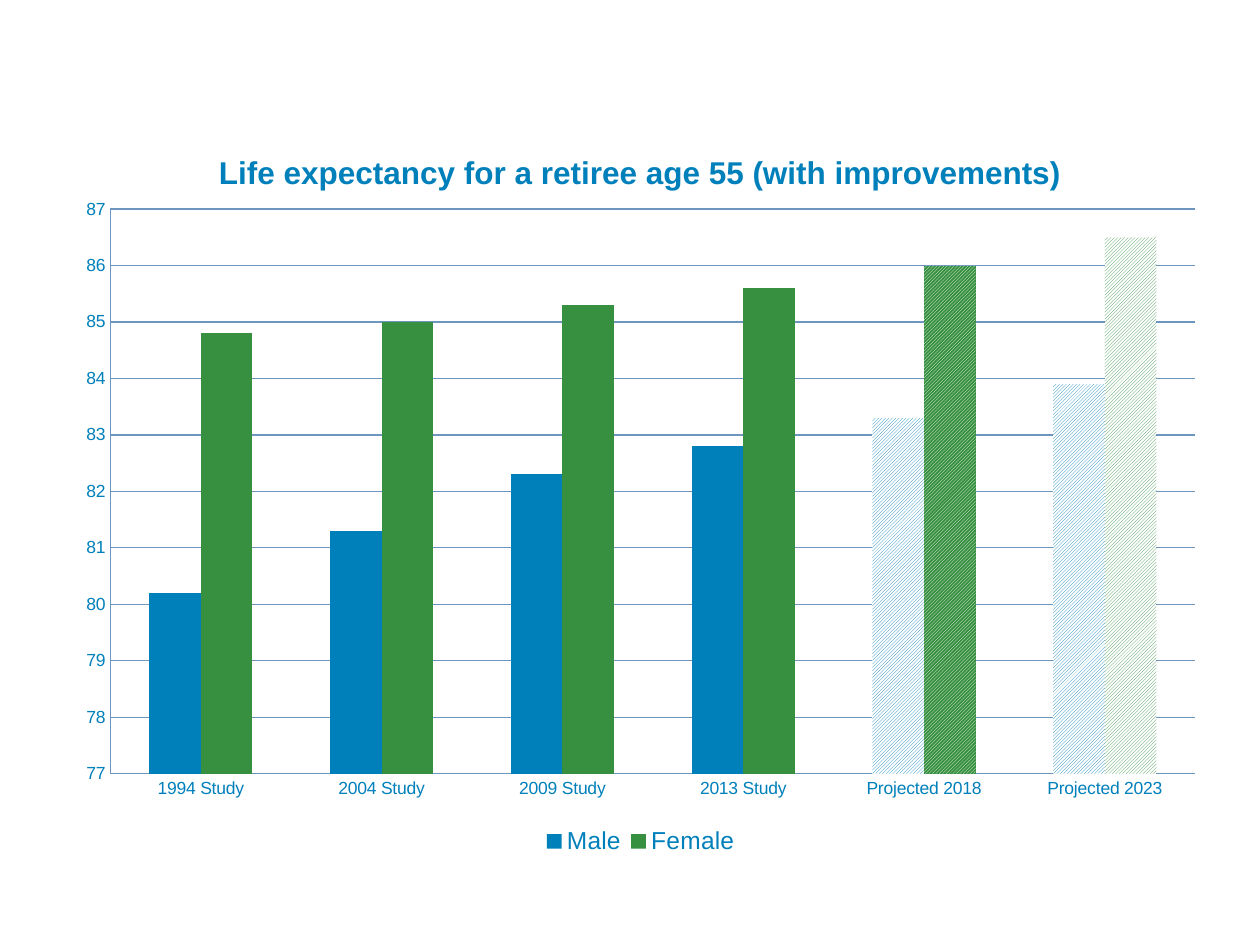
from lxml import etree
from pptx import Presentation
from pptx.chart.data import CategoryChartData
from pptx.dml.color import RGBColor
from pptx.enum.chart import XL_CHART_TYPE, XL_LEGEND_POSITION, XL_TICK_MARK
from pptx.enum.dml import MSO_PATTERN
from pptx.oxml.ns import qn
from pptx.util import Inches, Pt

COLUMNS = XL_CHART_TYPE.COLUMN_CLUSTERED
BOTTOM = XL_LEGEND_POSITION.BOTTOM
NO_TICK = XL_TICK_MARK.NONE
HATCH = MSO_PATTERN.DARK_UPWARD_DIAGONAL

COLORS = {"male": "0080BB", "female": "369040", "white": "FFFFFF", "grid": "6D96BF"}
RGB = {name: RGBColor.from_string(value) for name, value in COLORS.items()}
CATEGORIES = ["1994 Study", "2004 Study", "2009 Study", "2013 Study",
              "Projected 2018", "Projected 2023"]
SERIES = {
    "Male": [80.2, 81.3, 82.3, 82.8, 83.3, 83.9],
    "Female": [84.8, 85.0, 85.3, 85.6, 86.0, 86.5],
}
# Hatched columns: (series, category index) -> (foreground, background)
PROJECTED = {
    ("Male", 4): ("male", "white"),
    ("Male", 5): ("male", "white"),
    ("Female", 4): ("white", "female"),
    ("Female", 5): ("female", "white"),
}


def set_layout(parent, after, inner=False, **fractions):
    """Place a chart part by fractions of the chart area."""
    for old in parent.findall(qn("c:layout")):
        parent.remove(old)
    layout = etree.Element(qn("c:layout"))
    manual = etree.SubElement(layout, qn("c:manualLayout"))
    settings = {"layoutTarget": "inner"} if inner else {}
    settings.update(xMode="edge", yMode="edge", **fractions)
    for tag, value in settings.items():
        etree.SubElement(manual, qn(f"c:{tag}")).set("val", str(value))
    if after:
        parent.find(qn(after)).addnext(layout)
    else:
        parent.insert(0, layout)


def add_text(tf, text, size, color, bold=False, font="Arial"):
    r = tf.paragraphs[0].add_run()
    r.text = text
    r.font.name, r.font.size, r.font.bold = font, Pt(size), bold
    r.font.color.rgb = RGB[color]


prs = Presentation()
prs.slide_width, prs.slide_height = Inches(10), Inches(7.5)
s = prs.slides.add_slide(prs.slide_layouts[6])

data = CategoryChartData(number_format="0")
data.categories = CATEGORIES
for name, values in SERIES.items():
    data.add_series(name, values)
chart = s.shapes.add_chart(COLUMNS, Inches(0.5), Inches(0.92),
                           Inches(9.17), Inches(5.92), data).chart
chart.font.name, chart.font.size = "Arial", Pt(10)
chart.font.color.rgb = RGB["male"]

# Title
chart.has_title = True
title = chart.chart_title
add_text(title.text_frame, "Life expectancy for a retiree age 55 (with improvements)",
         18, "male", bold=True)
title.include_in_layout = False
set_layout(title._element, "c:tx", x=0.13, y=0.04)

# Columns
plot = chart.plots[0]
plot.gap_width, plot.overlap = 150, 0
plot.vary_by_categories = False
for series in plot.series:
    series.format.fill.solid()
    series.format.fill.fore_color.rgb = RGB[series.name.lower()]
    series.invert_if_negative = False
for series in plot.series:
    for i in range(len(CATEGORIES)):
        if (series.name, i) in PROJECTED:
            fore, back = PROJECTED[series.name, i]
            fill = series.points[i].format.fill
            fill.patterned()
            fill.pattern = HATCH
            fill.fore_color.rgb, fill.back_color.rgb = RGB[fore], RGB[back]

# Axes
value_axis = chart.value_axis
value_axis.minimum_scale, value_axis.maximum_scale = 77, 87
value_axis.major_unit = 1
value_axis.has_major_gridlines = True
for axis in (value_axis, chart.category_axis):
    axis.major_tick_mark = axis.minor_tick_mark = NO_TICK
for part in (value_axis, chart.category_axis, value_axis.major_gridlines):
    part.format.line.color.rgb = RGB["grid"]
    part.format.line.width = Pt(0.75)
set_layout(plot._element.getparent(), None, inner=True, x=0.041, y=0.125, w=0.939, h=0.757)

# Legend
chart.has_legend = True
legend = chart.legend
legend.position = BOTTOM
legend.include_in_layout = False
legend.font.name, legend.font.size = "Arial", Pt(14)
legend.font.color.rgb = RGB["male"]
set_layout(legend._element, "c:legendPos", x=0.41, y=0.95, w=0.18, h=0.05)

prs.save("out.pptx")
